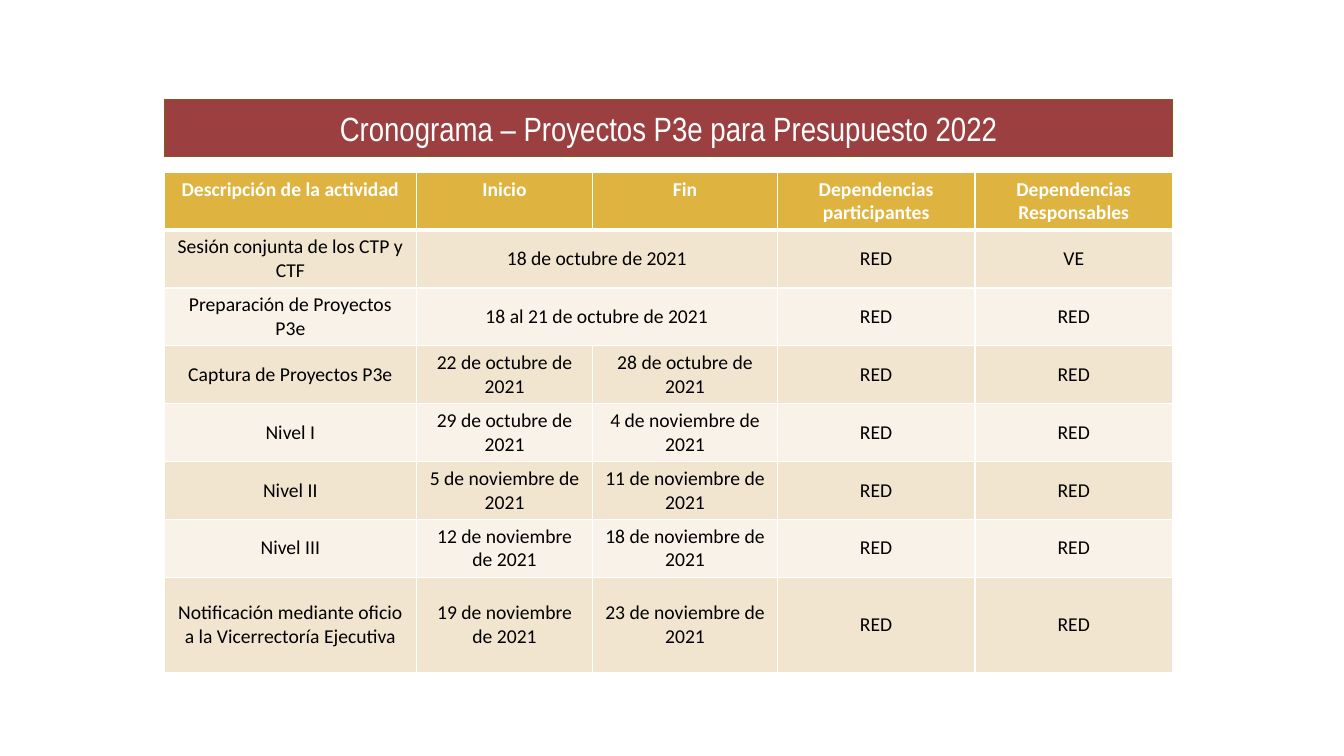
from lxml import etree
from pptx import Presentation
from pptx import util as u
from pptx.dml.color import RGBColor
from pptx.enum import shapes, text
from pptx.oxml import ns

HUES = {"wine": "9B3F40", "edge": "7A5E15", "gold": "DEB340", "sand": "F2E5CF",
        "cream": "F9F2E8", "white": "FFFFFF", "black": "000000"}
HEAD = {"size": u.Pt(14), "name": "Calibri", "bold": True}
BODY = {**HEAD, "bold": False}
TITLE = {"size": u.Pt(24), "name": "Arial Narrow", "bold": False}

WIDTHS = [2.5, 1.75, 1.83, 1.96, 1.96]
ROWS = [
    ["Descripción de la actividad", "Inicio", "Fin",
     "Dependencias participantes", "Dependencias Responsables"],
    ["Sesión conjunta de los CTP y CTF", "18 de octubre de 2021", "", "RED", "VE"],
    ["Preparación de Proyectos P3e", "18 al 21 de octubre de 2021", "", "RED", "RED"],
    ["Captura de Proyectos P3e", "22 de octubre de 2021", "28 de octubre de 2021", "RED", "RED"],
    ["Nivel I", "29 de octubre de 2021", "4 de noviembre de 2021", "RED", "RED"],
    ["Nivel II", "5 de noviembre de 2021", "11 de noviembre de 2021", "RED", "RED"],
    ["Nivel III", "12 de noviembre de 2021", "18 de noviembre de 2021", "RED", "RED"],
    ["Notificación mediante oficio a la Vicerrectoría Ejecutiva",
     "19 de noviembre de 2021", "23 de noviembre de 2021", "RED", "RED"],
]


def write(frame, words, style, hue):
    para = frame.paragraphs[0]
    para.alignment = text.PP_ALIGN.CENTER
    run = para.add_run()
    run.text = words
    for key, val in style.items():
        setattr(run.font, key, val)
    run.font.color.rgb = RGBColor.from_string(HUES[hue])


def border(cell, side, width):
    line = etree.SubElement(cell._tc.get_or_add_tcPr(), ns.qn(f"a:ln{side}"), w=str(u.Pt(width)))
    fill = etree.SubElement(line, ns.qn("a:solidFill"))
    etree.SubElement(fill, ns.qn("a:srgbClr"), val=HUES["white"])


deck = Presentation()
deck.slide_width, deck.slide_height = u.Inches(13.33), u.Inches(7.5)
slide = deck.slides.add_slide(deck.slide_layouts[6])

bar = slide.shapes.add_shape(shapes.MSO_SHAPE.RECTANGLE, u.Inches(1.63), u.Inches(0.99),
                             u.Inches(10), u.Inches(0.56))
bar.shadow.inherit = False
bar.fill.solid()
bar.fill.fore_color.rgb = RGBColor.from_string(HUES["wine"])
bar.line.color.rgb = RGBColor.from_string(HUES["edge"])
bar.line.width = u.Pt(0.75)
bar.text_frame.vertical_anchor = text.MSO_ANCHOR.MIDDLE
write(bar.text_frame, "Cronograma – Proyectos P3e para Presupuesto 2022", TITLE, "white")

grid = slide.shapes.add_table(len(ROWS), len(WIDTHS), u.Inches(1.63), u.Inches(1.71),
                              u.Inches(10), u.Inches(4.59)).table
for col, width in zip(grid.columns, WIDTHS):
    col.width = u.Inches(width)

for r, row in enumerate(ROWS):
    last = r == len(ROWS) - 1
    grid.rows[r].height = u.Inches(0.95 if last else 0.52)
    band = "gold" if r == 0 else "sand" if r % 2 else "cream"
    for c, words in enumerate(row):
        cell = grid.cell(r, c)
        edges = {"L": 1, "R": 1, "T": 3 if r == 1 else 1, "B": 3 if r == 0 else 1}
        for side, width in edges.items():
            border(cell, side, width)
        cell.fill.solid()
        cell.fill.fore_color.rgb = RGBColor.from_string(HUES[band])
        cell.vertical_anchor = text.MSO_ANCHOR.MIDDLE if r else text.MSO_ANCHOR.TOP
        if words:
            write(cell.text_frame, words, BODY if r else HEAD, "black" if r else "white")
        else:
            grid.cell(r, c - 1).merge(cell)

deck.save("out.pptx")
